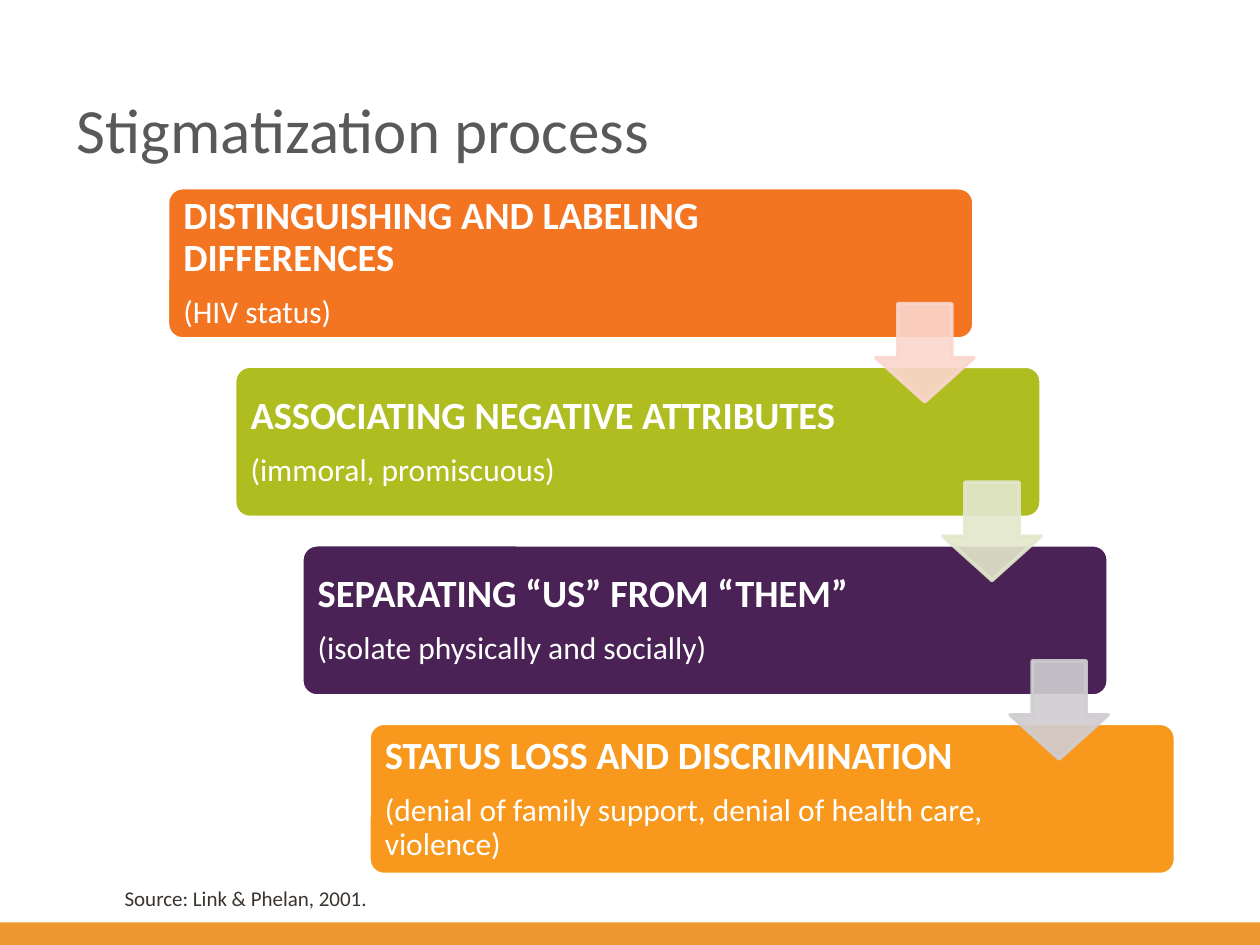
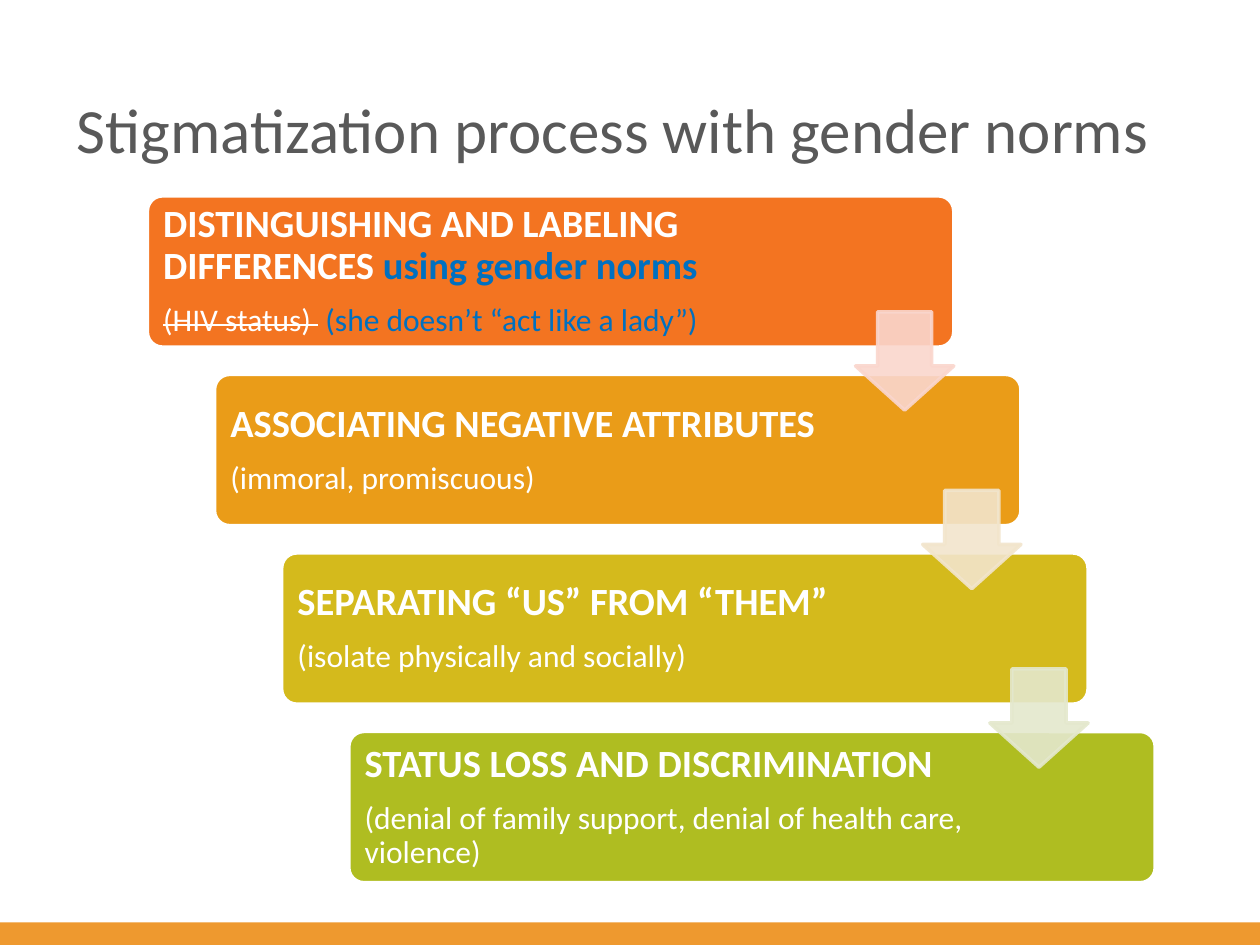
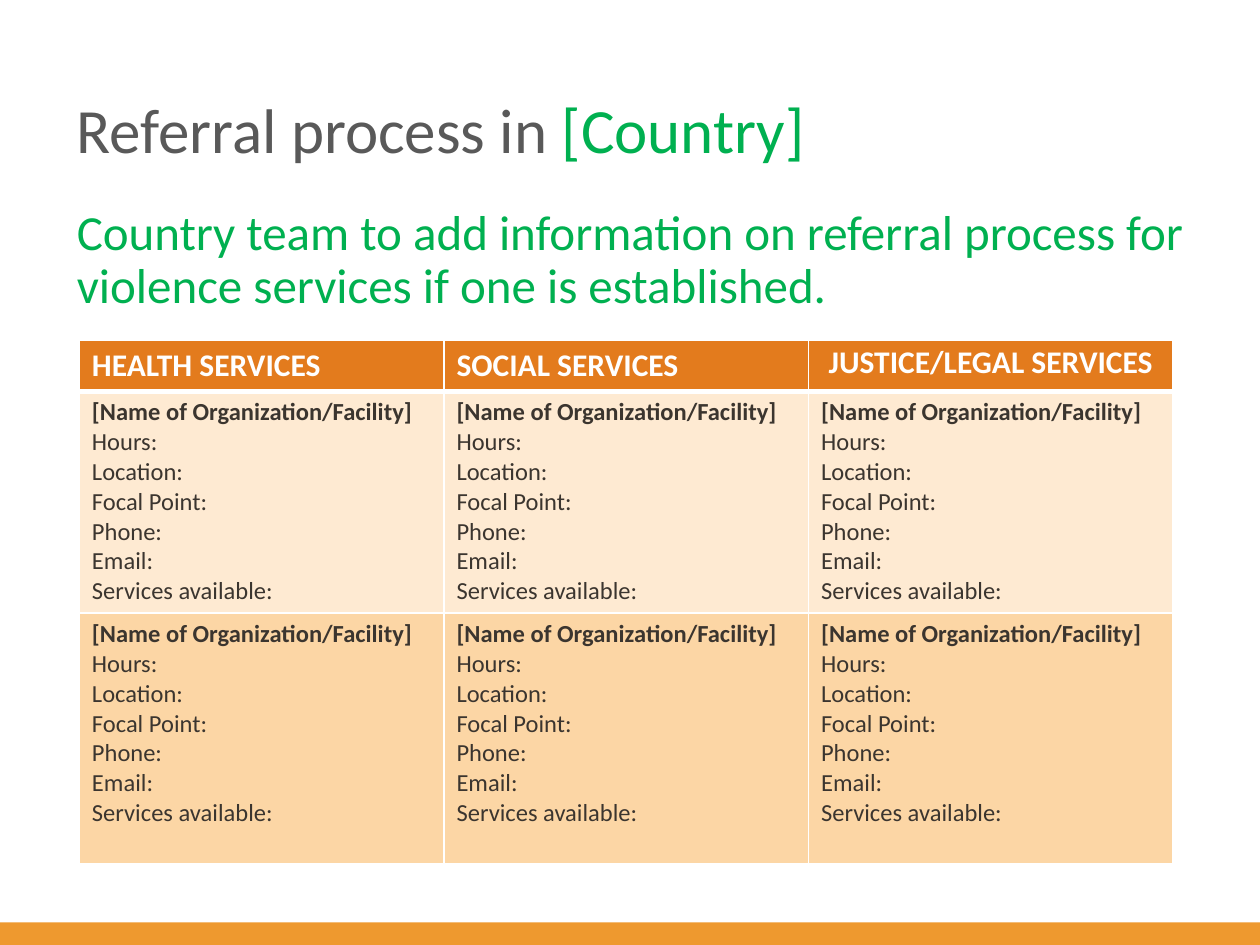
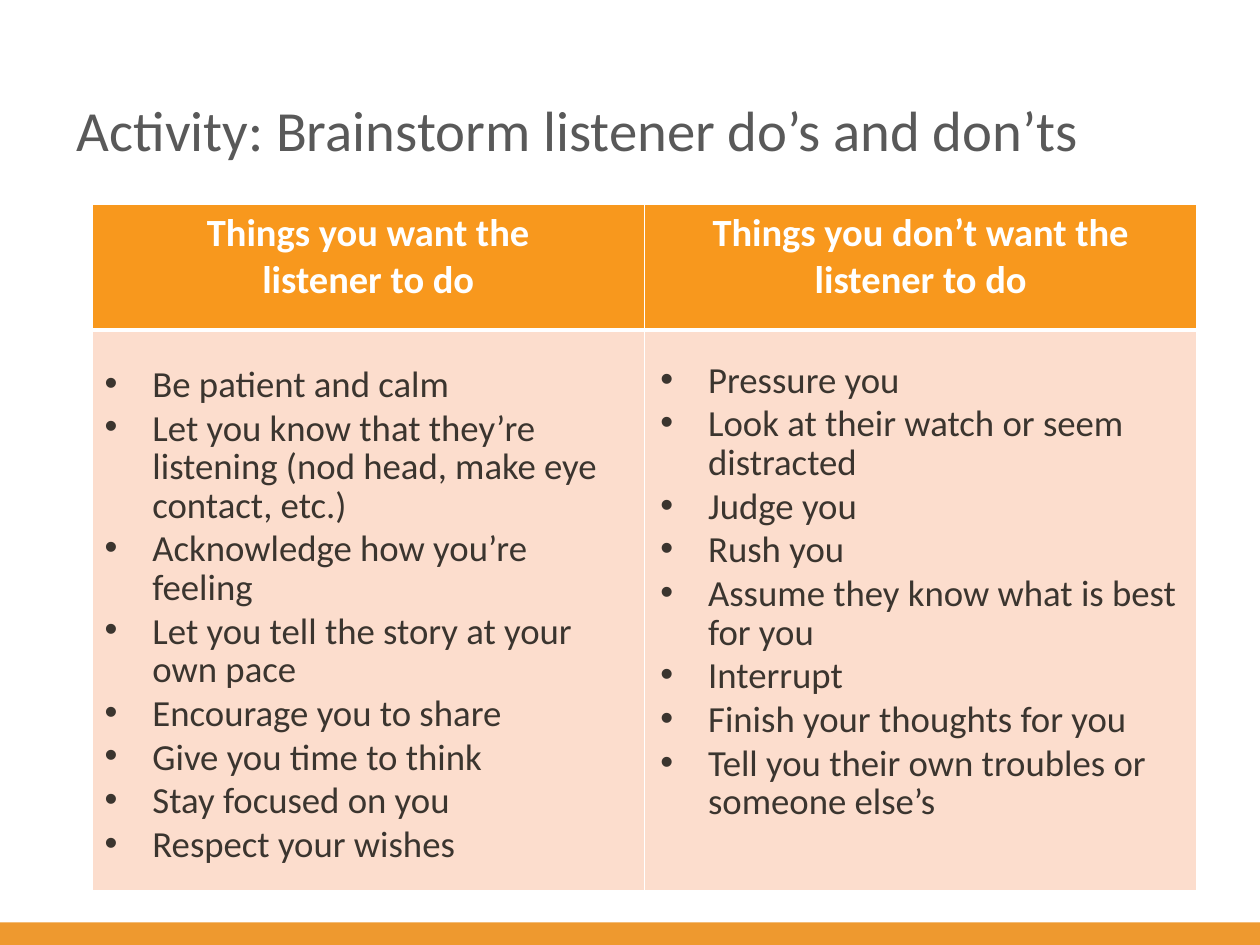
from dataclasses import dataclass
from typing import NamedTuple

from lxml.etree import SubElement
from pptx import Presentation
from pptx.dml.color import RGBColor
from pptx.enum.shapes import MSO_SHAPE as Shape
from pptx.enum.text import MSO_ANCHOR as Anchor, MSO_AUTO_SIZE as AutoSize, PP_ALIGN as Align
from pptx.oxml.ns import qn
from pptx.util import Emu, Inches, Pt

FONT = "Calibri"
COLORS = {
    "white": "FFFFFF", "band": "EE992F", "title": "595959", "text": "3B352F",
    "note": "00B050", "gender": "0070C0",
    "orange": "F37421", "green": "AFBD21", "purple": "4A2256", "amber": "F8981D",
    "gold": "EA9C18", "mustard": "D4BA1C",
    "pale orange": "FAD6CD", "pale green": "E3E8CD", "pale purple": "D0CDD1",
    "pale gold": "F2E5CC", "pale mustard": "E4E8CD",
    "services head": "E37B1D", "services light": "FEEAD2", "services dark": "FCD6A5",
    "listener body": "FCDDCD",
}
WIDTH, HEIGHT = Inches(10), Inches(7.5)
GRID_COLS, GRID_ROWS = 100, 75
TITLE_ONLY, TITLE_BODY, TWO_LISTS = 5, 1, 3


def cols(n: float) -> Emu:
    return Emu(round(WIDTH * n / GRID_COLS))


def rows(n: float) -> Emu:
    return Emu(round(HEIGHT * n / GRID_ROWS))


class Box(NamedTuple):
    """A place on the slide, in grid columns and rows."""
    col: float
    row: float
    wide: float
    high: float

    def emu(self) -> tuple:
        return cols(self.col), rows(self.row), cols(self.wide), rows(self.high)

    def shifted(self, dcol: float, drow: float) -> "Box":
        return self._replace(col=self.col + dcol, row=self.row + drow)


class Run(NamedTuple):
    text: str
    color: str = ""
    strike: bool = False


@dataclass(frozen=True)
class Step:
    heading: tuple
    example: tuple


@dataclass(frozen=True)
class Staircase:
    left: float
    top: float
    fills: tuple
    arrows: tuple


BAND = Box(0, 73.2, 100, 1.8)
TITLE = Box(5.1, 4.9, 89.9, 10.6)
STEP_SIZE = (64, 12)
STEP_SHIFT = (5.33, 14.17)
LABEL = Box(0.35, 0.35, 50.1, 11.3)
ARROW = Box(56.2, 9.2, 7.8, 7.8)

LATER_STEPS = (
    Step(("ASSOCIATING NEGATIVE ATTRIBUTES",), ("(immoral, promiscuous)",)),
    Step(("SEPARATING “US” FROM “THEM”",), ("(isolate physically and socially)",)),
    Step(("STATUS LOSS AND DISCRIMINATION",),
         ("(denial of family support, denial of health care, violence)",)),
)
PLAIN_STEP = Step(("DISTINGUISHING AND LABELING DIFFERENCES",), ("(HIV status)",))
GENDER_STEP = Step(
    ("DISTINGUISHING AND LABELING DIFFERENCES ", Run("using gender norms", "gender")),
    (Run("(HIV status) ", strike=True), " ", Run("(she doesn’t “act like a lady”)", "gender")),
)
SERVICES = ("HEALTH SERVICES", "SOCIAL SERVICES", "JUSTICE/LEGAL SERVICES")
CONTACT_LINES = ("Hours:", "Location:", "Focal Point:", "Phone:", "Email:", "Services available:")
LISTENER_HEADS = ("Things you want the\nlistener to do", "Things you don’t want the listener to do")
DOS = (
    "Be patient and calm",
    "Let you know that they’re listening (nod head, make eye contact, etc.)",
    "Acknowledge how you’re feeling",
    "Let you tell the story at your own pace",
    "Encourage you to share",
    "Give you time to think",
    "Stay focused on you",
    "Respect your wishes",
)
DONTS = (
    "Pressure you",
    "Look at their watch or seem distracted",
    "Judge you",
    "Rush you",
    "Assume they know what is best for you",
    "Interrupt",
    "Finish your thoughts for you",
    "Tell you their own troubles or someone else’s",
)


def rgb(name: str) -> RGBColor:
    return RGBColor.from_string(COLORS[name])


def set_bullet(p, indent: float) -> None:
    """Hang a bullet by indent inches, or clear the inherited one when it is 0."""
    pPr = p._p.get_or_add_pPr()
    pPr.set("marL", str(Inches(indent)))
    pPr.set("indent", str(-Inches(indent)))
    if indent:
        SubElement(pPr, qn("a:buFont"), typeface="Arial")
        SubElement(pPr, qn("a:buChar"), char="•")
    else:
        SubElement(pPr, qn("a:buNone"))


def write(tf, *runs, size: float, color: str, bold: bool = False, align=Align.LEFT,
          line: float | Pt = 1.0, before: float = 0, after: float = 0,
          indent: float = 0, more: bool = False) -> None:
    """Write one paragraph of strings and Runs; more adds it below the others."""
    p = tf.add_paragraph() if more else tf.paragraphs[0]
    p.alignment, p.line_spacing = align, line
    p.space_before, p.space_after = Pt(before if more else 0), Pt(after)
    set_bullet(p, indent)
    for run in runs:
        run = run if isinstance(run, Run) else Run(run)
        for i, text in enumerate(run.text.split("\n")):
            if i:
                p.add_line_break()
            r = p.add_run()
            r.text = text
            r.font.name, r.font.size, r.font.bold = FONT, Pt(size), bold
            r.font.color.rgb = rgb(run.color or color)
            if run.strike:
                r._r.get_or_add_rPr().set("strike", "sngStrike")


def place(sp, box: Box, anchor=Anchor.TOP):
    """Move a text shape, make it wrap, and return its text frame."""
    sp.left, sp.top, sp.width, sp.height = box.emu()
    tf = sp.text_frame
    tf.word_wrap, tf.auto_size, tf.vertical_anchor = True, AutoSize.NONE, anchor
    return tf


def add_block(shapes, kind, box: Box, fill: str, line: str = "", adjust: tuple = ()):
    sp = shapes.add_shape(kind, *box.emu())
    sp.shadow.inherit = False
    sp.fill.solid()
    sp.fill.fore_color.rgb = rgb(fill)
    if line:
        sp.line.color.rgb, sp.line.width = rgb(line), Pt(2)
    else:
        sp.line.fill.background()
    for i, value in enumerate(adjust):
        sp.adjustments[i] = value
    return sp


def add_slide(prs, layout: int, *title, size: float = 36):
    s = prs.slides.add_slide(prs.slide_layouts[layout])
    write(place(s.shapes.title, TITLE, Anchor.MIDDLE), *title, size=size, color="title")
    return s


def add_band_to_master(prs, s) -> None:
    band = add_block(s.shapes, Shape.RECTANGLE, BAND, "band")
    prs.slide_master.shapes.element.append(band.element)


def add_label(shapes, box: Box, step: Step) -> None:
    tf = place(shapes.add_textbox(*box.emu()), box, Anchor.MIDDLE)
    tf.margin_left = tf.margin_right = tf.margin_top = tf.margin_bottom = Inches(0.09)
    write(tf, *step.heading, size=22, color="white", bold=True, line=0.9, after=9.4)
    write(tf, *step.example, size=18, color="white", line=0.9, after=7.7, more=True)


def add_staircase(s, stairs: Staircase, steps: tuple) -> None:
    shapes = s.shapes.add_group_shape().shapes

    def at(i: int, part: Box) -> Box:
        return part.shifted(stairs.left + i * STEP_SHIFT[0], stairs.top + i * STEP_SHIFT[1])

    for i, (step, fill) in enumerate(zip(steps, stairs.fills)):
        add_block(shapes, Shape.ROUNDED_RECTANGLE, at(i, Box(0, 0, *STEP_SIZE)), fill,
                  "white", (0.1,))
        add_label(shapes, at(i, LABEL), step)
    for i, fill in enumerate(stairs.arrows):
        arrow = add_block(shapes, Shape.DOWN_ARROW, at(i, ARROW), fill, fill, (0.55, 0.45))
        for color in arrow.element.spPr.iter(qn("a:srgbClr")):
            SubElement(color, qn("a:alpha"), val="90000")


def set_borders(cell, **widths: float) -> None:
    """Draw white borders; keywords are the sides L, R, T, B in points."""
    tcPr = cell._tc.get_or_add_tcPr()
    for side in "LRTB":
        ln = SubElement(tcPr, qn(f"a:ln{side}"), w=str(Pt(widths.get(side, 1))))
        SubElement(SubElement(ln, qn("a:solidFill")), qn("a:srgbClr"), val=COLORS["white"])


def add_grid(s, box: Box, heights: tuple, fills: tuple, n_cols: int):
    """Add a table with a thick rule under its first row, behind the other shapes."""
    frame = s.shapes.add_table(len(heights), n_cols, *box.emu())
    s.shapes.element.insert(2, frame.element)
    table = frame.table
    table.horz_banding = False
    for i, (height, fill) in enumerate(zip(heights, fills)):
        table.rows[i].height = rows(height)
        for cell in table.rows[i].cells:
            set_borders(cell, B=3 if i == 0 else 1, T=3 if i == 1 else 1)
            cell.fill.solid()
            cell.fill.fore_color.rgb = rgb(fill)
    return table


def stigma_slide(prs):
    s = add_slide(prs, TITLE_ONLY, "Stigmatization process")
    stairs = Staircase(13.3, 14.9, ("orange", "green", "purple", "amber"),
                       ("pale orange", "pale green", "pale purple"))
    add_staircase(s, stairs, (PLAIN_STEP, *LATER_STEPS))
    source = Box(8.9, 69.8, 52.9, 3)
    write(place(s.shapes.add_textbox(*source.emu()), source),
          "Source: Link & Phelan, 2001.", size=12, color="text")
    return s


def gender_slide(prs) -> None:
    s = add_slide(prs, TITLE_ONLY, "Stigmatization process with gender norms")
    stairs = Staircase(11.7, 15.55, ("orange", "gold", "mustard", "green"),
                       ("pale orange", "pale gold", "pale mustard"))
    add_staircase(s, stairs, (GENDER_STEP, *LATER_STEPS))


def referral_slide(prs) -> None:
    s = add_slide(prs, TITLE_BODY, "Referral process in ", Run("[Country]", "note"))
    write(place(s.placeholders[1], Box(5.1, 16, 89.9, 10)),
          "Country team to add information on referral process for violence services "
          "if one is established.", size=28, color="note", line=Pt(30))
    table = add_grid(s, Box(6.3, 27, 86.8, 41.5), (4, 17.6, 19.9),
                     ("services head", "services light", "services dark"), len(SERVICES))
    for i, service in enumerate(SERVICES):
        last = i == len(SERVICES) - 1
        write(table.cell(0, i).text_frame, service, size=18, color="white", bold=True,
              align=Align.CENTER if last else Align.LEFT, line=Pt(20) if last else 1.0)
        for row in (1, 2):
            tf = table.cell(row, i).text_frame
            write(tf, "[Name of Organization/Facility]", size=14, color="text", bold=True)
            for text in CONTACT_LINES:
                write(tf, text, size=14, color="text", more=True)


def listener_slide(prs) -> None:
    s = add_slide(prs, TWO_LISTS, "Activity: Brainstorm listener do’s and don’ts", size=32.4)
    table = add_grid(s, Box(7.3, 16.2, 87.7, 54.5), (10, 44.5),
                     ("amber", "listener body"), len(LISTENER_HEADS))
    for i, head in enumerate(LISTENER_HEADS):
        write(table.cell(0, i).text_frame, head, size=22, color="white", bold=True,
              align=Align.CENTER)
    lists = ((1, Box(7.3, 27.2, 44.1, 43.3), DOS, 0.05),
             (2, Box(51.4, 27.2, 43.6, 43.1), DONTS, 0.4))
    for index, box, items, bottom in lists:
        tf = place(s.placeholders[index], box, Anchor.MIDDLE)
        tf.margin_bottom = Inches(bottom)
        for i, item in enumerate(items):
            write(tf, item, size=21, color="text", line=Pt(22), before=3, indent=0.38,
                  more=i > 0)


def main() -> None:
    prs = Presentation()
    prs.slide_width, prs.slide_height = WIDTH, HEIGHT
    add_band_to_master(prs, stigma_slide(prs))
    gender_slide(prs)
    referral_slide(prs)
    listener_slide(prs)
    prs.save("out.pptx")


if __name__ == "__main__":
    main()
